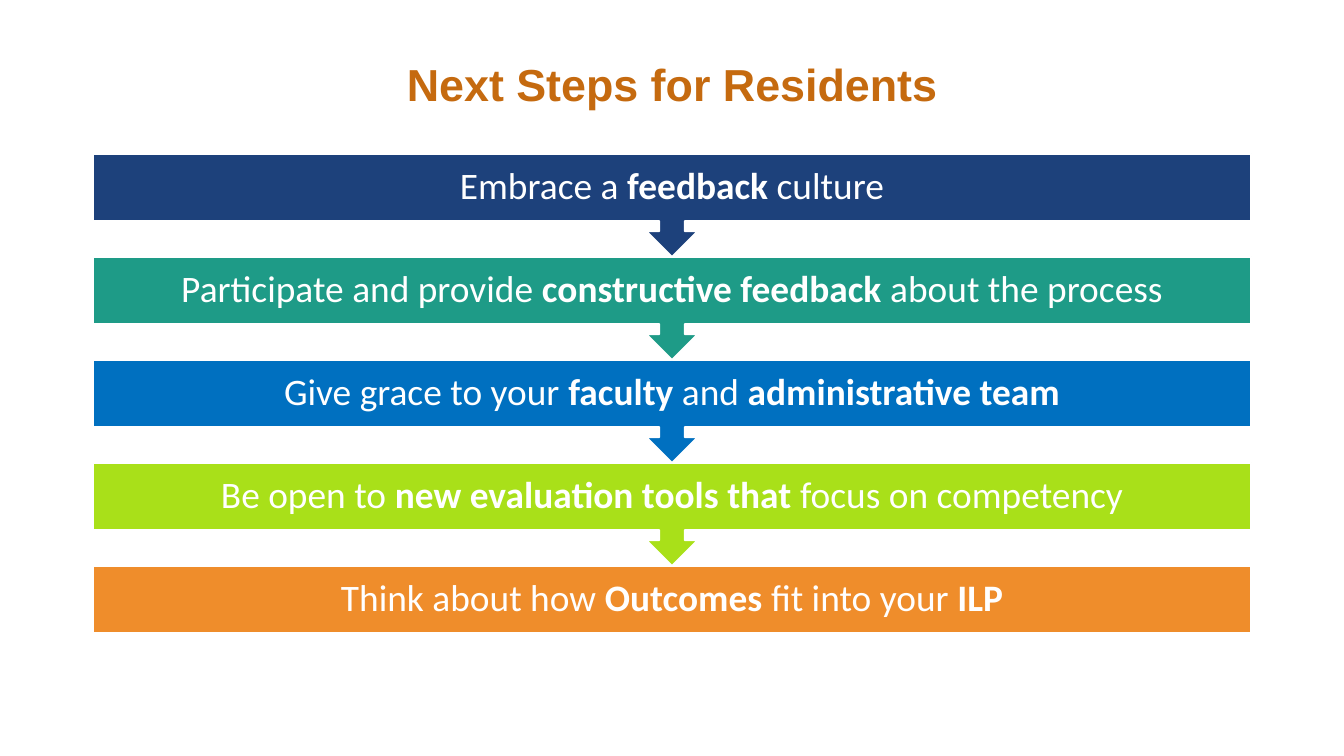
import pptx
import pptx.util
import pptx.dml.color
import pptx.enum.shapes
import pptx.enum.text

PX = 914400 / 134.4
LEFT, TOP, WIDTH = 93, 154, 1158
BAR_H, STEP = 67, 103

STEPS = [
    ("1D417B", [("Embrace a ", False), ("feedback", True), (" culture", False)]),
    ("1E9B87", [("Participate and provide ", False), ("constructive feedback ", True),
                ("about the process", False)]),
    ("0070C0", [("Give grace to your ", False), ("faculty", True), (" and ", False),
                ("administrative team", True)]),
    ("A9E019", [("Be open to ", False), ("new evaluation tools that ", True),
                ("focus on competency", False)]),
    ("EF8D2B", [("Think about how ", False), ("Outcomes ", True),
                ("fit into your ", False), ("ILP", True)]),
]


def px(n):
    return pptx.util.Emu(round(n * PX))


def color(value):
    return pptx.dml.color.RGBColor.from_string(value)


def add_run(p, text, *, font, size, fill, bold=False):
    r = p.add_run()
    r.text = text
    r.font.name = font
    r.font.size = pptx.util.Pt(size)
    r.font.bold = bold
    r.font.color.rgb = color(fill)


def centred_paragraph(tf, inset):
    """Set up a middle-anchored text frame and return its first paragraph."""
    tf.word_wrap = True
    tf.auto_size = pptx.enum.text.MSO_AUTO_SIZE.NONE
    tf.vertical_anchor = pptx.enum.text.MSO_ANCHOR.MIDDLE
    tf.margin_left = tf.margin_right = tf.margin_top = tf.margin_bottom = px(inset)
    p = tf.paragraphs[0]
    p.alignment = pptx.enum.text.PP_ALIGN.CENTER
    p.line_spacing = 0.9
    return p


def add_title(s, text):
    title = s.shapes.title
    title.left, title.top, title.width, title.height = px(LEFT), px(40), px(WIDTH), px(94)
    p = centred_paragraph(title.text_frame, 10)
    add_run(p, text, font="Arial", size=24, fill="C56A0F", bold=True)


def add_step(s, top, fill, parts, last):
    """Add a bar, with an arrow down to the next one unless it is the last."""
    kinds = pptx.enum.shapes.MSO_SHAPE
    kind, height = (kinds.RECTANGLE, BAR_H) if last else (kinds.DOWN_ARROW_CALLOUT, STEP)
    sp = s.shapes.add_shape(kind, px(LEFT), px(top), px(WIDTH), px(height))
    if not last:
        sp.adjustments[3] = BAR_H / STEP
    sp.shadow.inherit = False
    sp.fill.solid()
    sp.fill.fore_color.rgb = color(fill)
    sp.line.color.rgb = color("FFFFFF")
    sp.line.width = pptx.util.Pt(1)
    p = centred_paragraph(sp.text_frame, 21)
    for text, bold in parts:
        add_run(p, text, font="Calibri", size=20, fill="FFFFFF", bold=bold)


def main():
    prs = pptx.Presentation()
    prs.slide_width, prs.slide_height = px(1344), px(756)
    s = prs.slides.add_slide(prs.slide_layouts[5])
    add_title(s, "Next Steps for Residents")
    # Bottom bar first, so that each arrow tip lies over the bar below it
    for i, (fill, parts) in reversed(list(enumerate(STEPS))):
        add_step(s, TOP + i * STEP, fill, parts, last=i == len(STEPS) - 1)
    prs.save("out.pptx")


if __name__ == "__main__":
    main()
